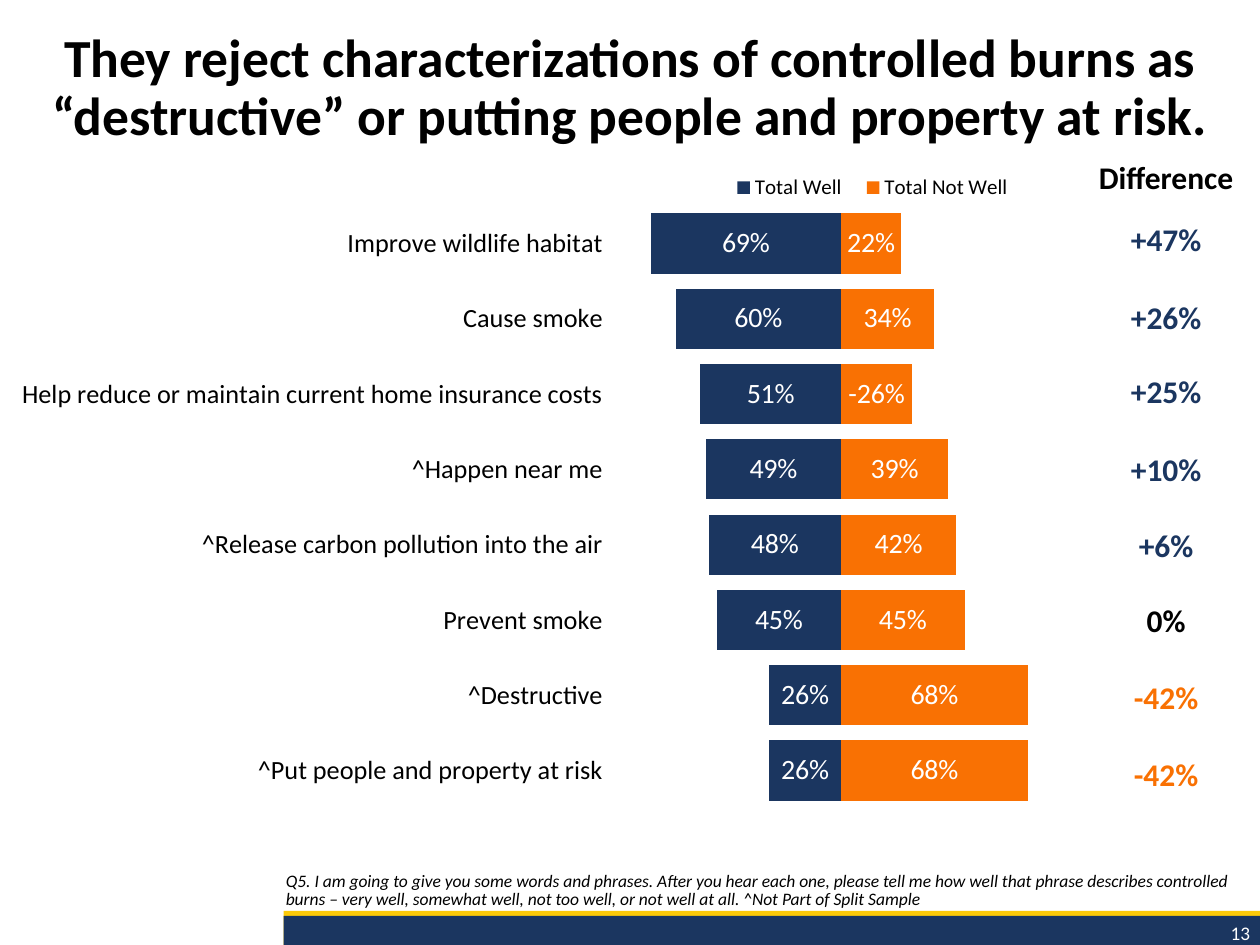
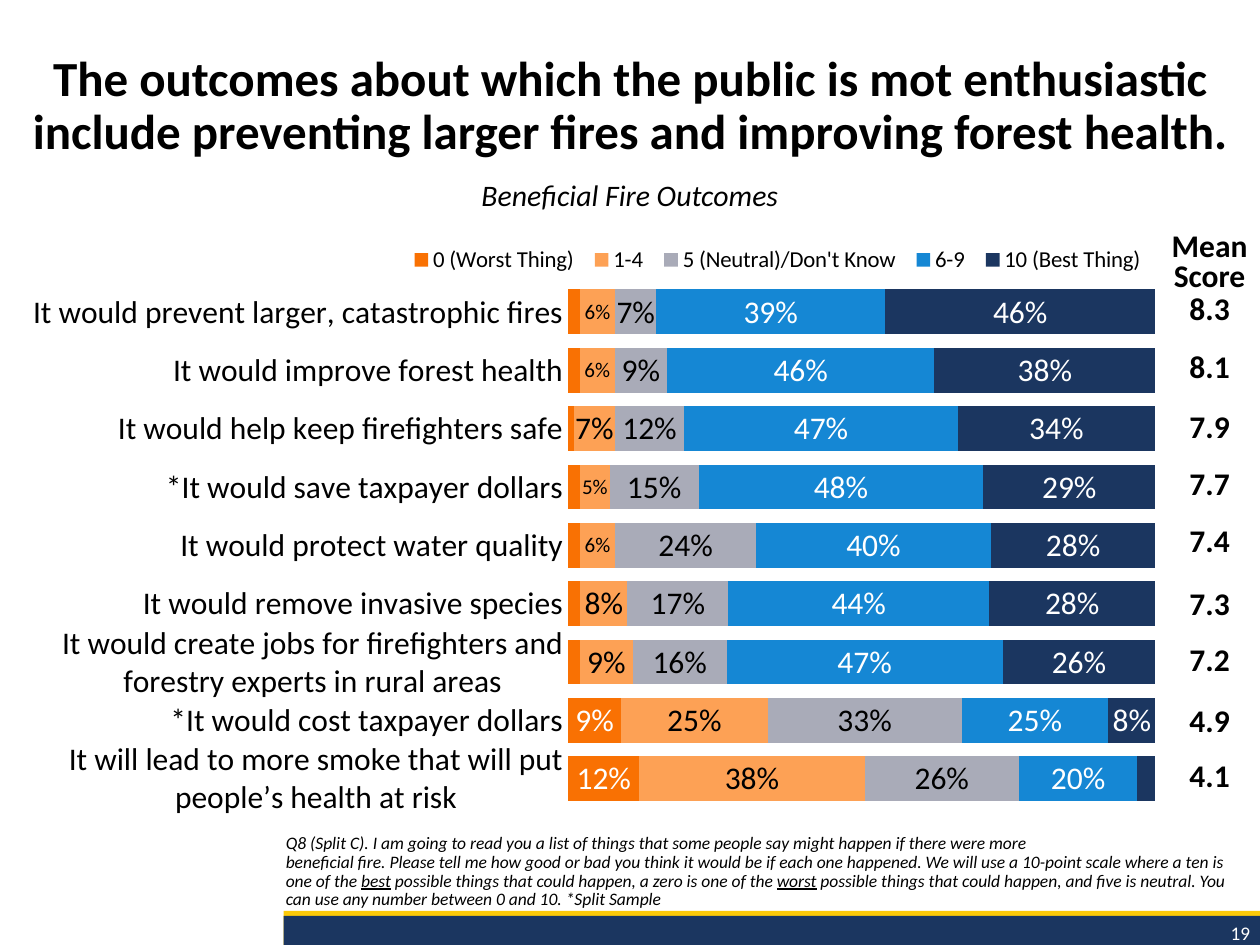
from lxml import etree
from pptx import Presentation
from pptx import util as u
from pptx.chart.data import CategoryChartData
from pptx.dml.color import RGBColor
from pptx.enum import chart as ch, shapes, text as tx
from pptx.oxml import ns

NAVY = RGBColor(0x1B, 0x36, 0x60)
ORANGE = RGBColor(0xF9, 0x71, 0x03)
PEACH = RGBColor(0xFD, 0xA1, 0x55)
GREY = RGBColor(0xA9, 0xAB, 0xB8)
BLUE = RGBColor(0x15, 0x87, 0xD4)
GOLD = RGBColor(0xFC, 0xCA, 0x09)
BLACK = RGBColor(0, 0, 0)
WHITE = RGBColor(255, 255, 255)
FONT = "Calibri"
SMALLEST_LABELLED = 0.05
SMALLEST_FULL_SIZE = 0.07

PHRASES = [
    ("Improve wildlife habitat", 0.69, 0.22, "+47%"),
    ("Cause smoke", 0.60, 0.34, "+26%"),
    ("Help reduce or maintain current home insurance costs", 0.51, 0.26, "+25%"),
    ("^Happen near me", 0.49, 0.39, "+10%"),
    ("^Release carbon pollution into the air", 0.48, 0.42, "+6%"),
    ("Prevent smoke", 0.45, 0.45, "0%"),
    ("^Destructive", 0.26, 0.68, "-42%"),
    ("^Put people and property at risk", 0.26, 0.68, "-42%"),
]
OUTCOMES = [
    ("It would prevent larger, catastrophic fires", 0.02, 0.06, 0.07, 0.39, 0.46, "8.3"),
    ("It would improve forest health", 0.02, 0.06, 0.09, 0.46, 0.38, "8.1"),
    ("It would help keep firefighters safe", 0.01, 0.07, 0.12, 0.47, 0.34, "7.9"),
    ("*It would save taxpayer dollars", 0.02, 0.05, 0.15, 0.48, 0.29, "7.7"),
    ("It would protect water quality", 0.02, 0.06, 0.24, 0.40, 0.28, "7.4"),
    ("It would remove invasive species", 0.02, 0.08, 0.17, 0.44, 0.28, "7.3"),
    ("It would create jobs for firefighters and forestry experts in rural areas",
     0.02, 0.09, 0.16, 0.47, 0.26, "7.2"),
    ("*It would cost taxpayer dollars", 0.09, 0.25, 0.33, 0.25, 0.08, "4.9"),
    ("It will lead to more smoke that will put people’s health at risk",
     0.12, 0.38, 0.26, 0.20, 0.03, "4.1"),
]


def inches(box):
    """Turn left, top, width and height into lengths."""
    return [u.Inches(side) for side in box]


def style_font(font, size, color, bold=False, italic=False):
    """Give a font the deck's typeface and the wanted look."""
    font.name, font.size, font.bold, font.italic = FONT, u.Pt(size), bold, italic
    font.color.rgb = color


def write(frame, words, size, color=BLACK, align=tx.PP_ALIGN.LEFT, spacing=None,
          anchor=tx.MSO_ANCHOR.TOP, bold=False, italic=False):
    """Fill a frame with one paragraph; _words_ are underlined."""
    frame.word_wrap = True
    frame.vertical_anchor = anchor
    paragraph = frame.paragraphs[0]
    paragraph.alignment = align
    paragraph.line_spacing = spacing
    for part, phrase in enumerate(words.split("_")):
        for number, line in enumerate(phrase.split("\n")):
            if number:
                paragraph.add_line_break()
            run = paragraph.add_run()
            run.text = line
            style_font(run.font, size, color, bold, italic)
            if part % 2:
                run.font.underline = True


def add_text(slide, box, words, size, **look):
    """Add a text box."""
    write(slide.shapes.add_textbox(*inches(box)).text_frame, words, size, **look)


def add_band(slide, top, height, color):
    """Add one stripe of the footer band."""
    band = slide.shapes.add_shape(shapes.MSO_SHAPE.RECTANGLE,
                                  *inches((2.25, top, 7.75, height)))
    band.shadow.inherit = False
    band.fill.solid()
    band.fill.fore_color.rgb = color
    band.line.fill.background()


def add_footer(slide, page, question):
    """Add the band, page number and survey question."""
    add_band(slide, 7.23, 0.27, GOLD)
    add_band(slide, 7.27, 0.23, NAVY)
    add_text(slide, (8.54, 7.26, 1.48, 0.29), page, 11, color=WHITE,
             align=tx.PP_ALIGN.RIGHT)
    add_text(slide, (2.17, 6.73, 7.83, 0.54), question, 10, italic=True,
             spacing=0.9, anchor=tx.MSO_ANCHOR.BOTTOM)


def add_title(slide, top, words, size):
    """Add the centred slide title."""
    add_text(slide, (0, top, 10, 1.22), words, size, bold=True, spacing=0.9,
             align=tx.PP_ALIGN.CENTER)


def place(part, position, box, inner=False):
    """Fix a chart part at fractions of the chart area."""
    for old in part.findall(ns.qn("c:layout")):
        part.remove(old)
    layout = etree.Element(ns.qn("c:layout"))
    manual = etree.SubElement(layout, ns.qn("c:manualLayout"))
    settings = [("layoutTarget", "inner")] if inner else []
    settings += [("xMode", "edge"), ("yMode", "edge"), *zip("xywh", box)]
    for tag, value in settings:
        etree.SubElement(manual, ns.qn(f"c:{tag}")).set("val", str(value))
    part.insert(position, layout)


def label_points(series, size, color):
    """Label each point that is wide enough, smaller where it is tight."""
    series.data_labels.show_value = False
    for index, value in enumerate(series.values):
        if abs(value) >= SMALLEST_LABELLED:
            fitted = size if abs(value) >= SMALLEST_FULL_SIZE else 12
            style_font(series.points[index].data_label.font, fitted, color)


def add_bars(slide, kind, box, categories, levels, plot_box, legend_box, limits,
             gap, sizes, number_format="0%"):
    """Add a stacked bar chart; levels hold name, values, fill and label colour."""
    category_size, label_size, legend_size = sizes
    data = CategoryChartData(number_format=number_format)
    data.categories = categories
    for name, values, _, _ in levels:
        data.add_series(name, values)
    chart = slide.shapes.add_chart(kind, *inches(box), data).chart
    style_font(chart.font, category_size, BLACK)
    chart.has_title = False

    chart.has_legend = True
    chart.legend.position = ch.XL_LEGEND_POSITION.TOP
    chart.legend.include_in_layout = False
    style_font(chart.legend.font, legend_size, BLACK)
    place(chart.legend._element, 1, legend_box)
    place(chart._chartSpace.chart.plotArea, 0, plot_box, inner=True)

    category_axis, value_axis = chart.category_axis, chart.value_axis
    category_axis.reverse_order = True
    category_axis.major_tick_mark = ch.XL_TICK_MARK.NONE
    category_axis.format.line.fill.background()
    style_font(category_axis.tick_labels.font, category_size, BLACK)
    value_axis.minimum_scale, value_axis.maximum_scale = limits
    value_axis.has_major_gridlines = False
    value_axis.visible = False

    bars = chart.plots[0]
    bars.gap_width, bars.overlap, bars.vary_by_categories = gap, 100, False
    for series, (_, _, fill, label_color) in zip(bars.series, levels):
        series.format.fill.solid()
        series.format.fill.fore_color.rgb = fill
        series.invert_if_negative = False
        label_points(series, label_size, label_color)
    return chart


def add_score_column(slide, box, heights, scores, tight_rows=0):
    """Add a one-column table of (words, colour), the first rows set tight."""
    table = slide.shapes.add_table(len(scores), 1, *inches(box)).table
    table.first_row = table.horz_banding = False
    for index, (height, (words, color)) in enumerate(zip(heights, scores)):
        table.rows[index].height = u.Inches(height)
        cell = table.cell(index, 0)
        cell.fill.background()
        cell.margin_left = cell.margin_right = cell.margin_top = u.Inches(0.01)
        cell.margin_bottom = 0
        cell.vertical_anchor = tx.MSO_ANCHOR.BOTTOM
        write(cell.text_frame, words, 18, color=color, bold=True,
              align=tx.PP_ALIGN.CENTER, anchor=None,
              spacing=u.Pt(17) if index < tight_rows else None)


def difference_color(difference):
    """Colour a difference by its sign."""
    return {"+": NAVY, "-": ORANGE}.get(difference[0], BLACK)


def build_phrases(slide):
    """Build the slide on how well phrases describe controlled burns."""
    add_footer(slide, "13", "Q5. I am going to give you some words and phrases. After you "
               "hear each one, please tell me how well that phrase describes controlled "
               "burns – very well, somewhat well, not too well, or not well at all. "
               "^Not Part of Split Sample")
    phrases, well, not_well, differences = zip(*PHRASES)
    chart = add_bars(
        slide, ch.XL_CHART_TYPE.BAR_STACKED, (0.13, 1.21, 9, 5.58), phrases,
        [("Total Well", well, NAVY, WHITE),
         ("Total Not Well", [-share for share in not_well], ORANGE, WHITE)],
        plot_box=(0.528, 0.076, 0.398, 0.857), legend_box=(0.62, 0.025, 0.27, 0.05),
        limits=(-0.82, 0.82), gap=25, sizes=(15, 16, 12), number_format="0%;0%")
    chart.value_axis.reverse_order = True
    chart.category_axis.tick_label_position = ch.XL_TICK_LABEL_POSITION.HIGH
    insurance_label = chart.plots[0].series[1].points[2].data_label
    write(insurance_label.text_frame, "-26%", 16, color=WHITE, anchor=None,
          align=tx.PP_ALIGN.CENTER)
    add_score_column(slide, (8.55, 1.23, 1.41, 5.05),
                     (0.34, 0.49, 0.62, 0.59, 0.62, 0.6, 0.6, 0.61, 0.61),
                     [("Difference", BLACK)]
                     + [(words, difference_color(words)) for words in differences])
    add_title(slide, 0.2, "They reject characterizations of controlled burns as "
              "“destructive” or putting people and property at risk.", 30.6)


def build_outcomes(slide):
    """Build the slide on beneficial fire outcomes."""
    add_footer(slide, "19", "Q8 (Split C). I am going to read you a list of things that some "
               "people say might happen if there were more\nbeneficial fire. Please tell me "
               "how good or bad you think it would be if each one happened. We will use a "
               "10-point scale where a ten is one of the _best_ possible things that could "
               "happen, a zero is one of the _worst_ possible things that could happen, and "
               "five is neutral. You can use any number between 0 and 10. *Split Sample")
    outcomes, *ratings, means = zip(*OUTCOMES)
    names = ("0 (Worst Thing)", "1-4", "5 (Neutral)/Don't Know", "6-9", "10 (Best Thing)")
    fills = (ORANGE, PEACH, GREY, BLUE, NAVY)
    label_colors = (WHITE, BLACK, BLACK, WHITE, WHITE)
    add_bars(slide, ch.XL_CHART_TYPE.BAR_STACKED_100, (-0.14, 1.67, 9.49, 4.91), outcomes,
             list(zip(names, ratings, fills, label_colors)),
             plot_box=(0.49, 0.117, 0.491, 0.849), legend_box=(0.35, 0.05, 0.63, 0.06),
             limits=(0, 1), gap=30, sizes=(18, 18, 13))
    add_score_column(slide, (9.27, 1.84, 0.66, 4.49),
                     (0.51, 0.26, 0.46, 0.48, 0.45, 0.45, 0.5, 0.45, 0.48, 0.44),
                     [(words, BLACK) for words in ("Mean Score", *means)], tight_rows=2)
    add_text(slide, (0, 1.4, 10, 0.34), "Beneficial Fire Outcomes", 17, italic=True,
             align=tx.PP_ALIGN.CENTER, spacing=u.Pt(17), anchor=tx.MSO_ANCHOR.MIDDLE)
    add_title(slide, 0.38, "The outcomes about which the public is mot enthusiastic include "
              "preventing larger fires and improving forest health.", 28)


def main():
    """Build and save the deck."""
    deck = Presentation()
    deck.slide_width, deck.slide_height = u.Inches(10), u.Inches(7.5)
    for build in (build_phrases, build_outcomes):
        build(deck.slides.add_slide(deck.slide_layouts[6]))
    deck.save("out.pptx")


if __name__ == "__main__":
    main()
